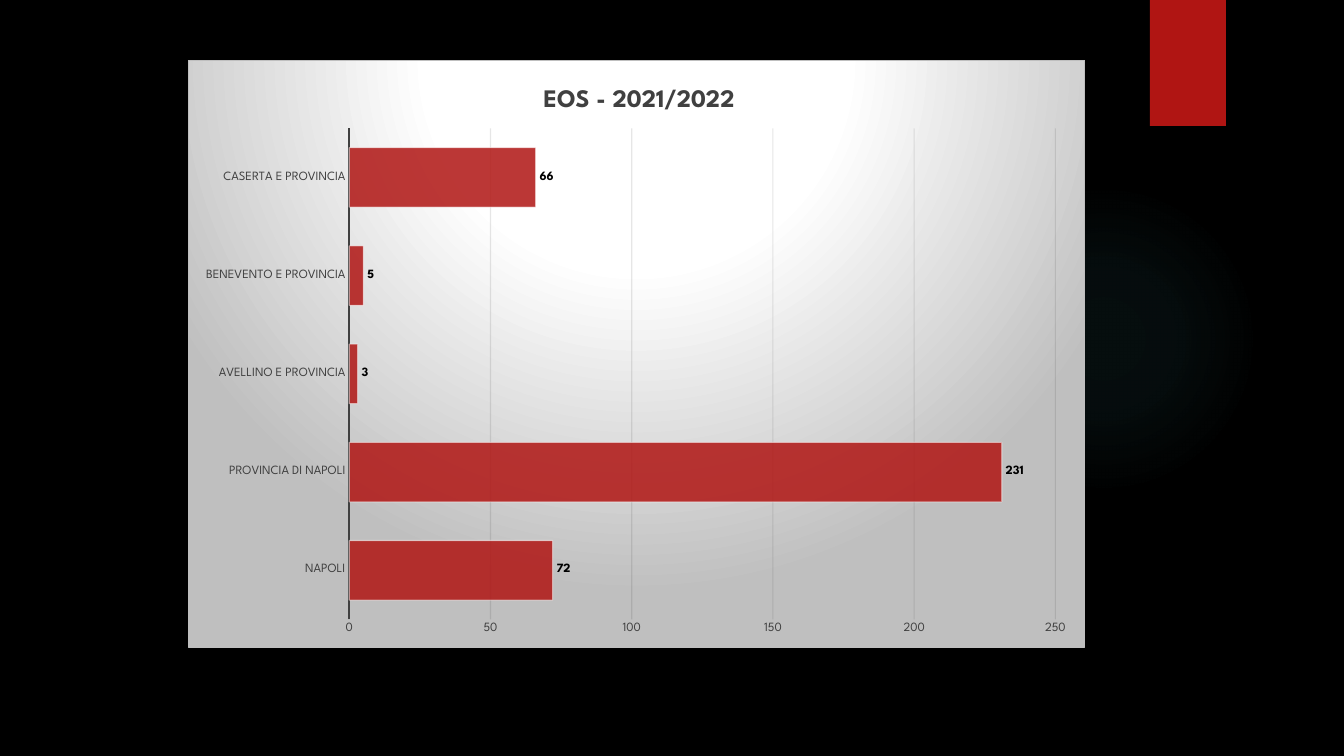
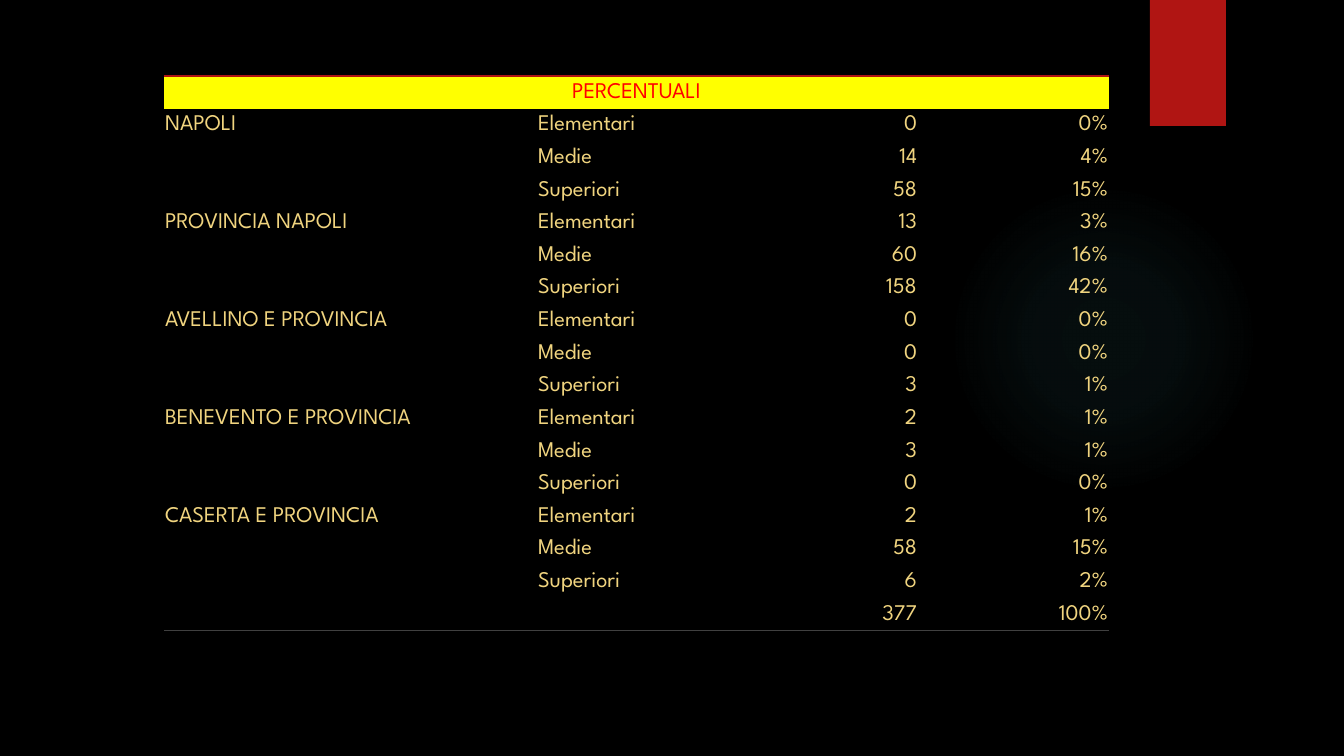
from dataclasses import dataclass
from typing import Optional

from lxml.etree import Element, SubElement
from pptx import Presentation
from pptx.chart.data import CategoryChartData
from pptx.dml.color import RGBColor
from pptx.enum.chart import XL_CHART_TYPE, XL_LABEL_POSITION, XL_TICK_MARK
from pptx.enum.shapes import MSO_SHAPE
from pptx.enum.text import MSO_ANCHOR, PP_ALIGN
from pptx.oxml.ns import qn
from pptx.util import Pt

PX = 914400 / 100.8
FONT = "League Spartan"
NO_TABLE_STYLE = "{2D5ABB26-0587-4C30-8999-92F81FD0307C}"

BLACK = RGBColor(0x00, 0x00, 0x00)
WHITE = RGBColor(0xFF, 0xFF, 0xFF)
RED = RGBColor(0xB0, 0x15, 0x13)
TEAL = RGBColor(0x50, 0xB9, 0xC1)
DARK_GREY = RGBColor(0x40, 0x40, 0x40)
LIGHT_GREY = RGBColor(0xBF, 0xBF, 0xBF)
GRID = RGBColor(0x0D, 0x0D, 0x0D)
SAND = RGBColor(0xF0, 0xD4, 0x7F)
YELLOW = RGBColor(0xFF, 0xFF, 0x00)
TITLE_RED = RGBColor(0xFF, 0x00, 0x00)


def px(n: float) -> int:
    return round(n * PX)


@dataclass(frozen=True)
class Box:
    x: int
    y: int
    w: int
    h: int

    def emu(self) -> tuple[int, int, int, int]:
        return px(self.x), px(self.y), px(self.w), px(self.h)


@dataclass(frozen=True)
class Stop:
    pos: int
    color: RGBColor
    alpha: int = 100


@dataclass(frozen=True)
class Area:
    chart_name: str
    table_name: str
    counts: tuple[int, int, int]


GLOW = Box(949, 184, 310, 310)
RIBBON = Box(1150, 0, 76, 126)
CHART = Box(188, 60, 897, 588)
PLOT = Box(349, 128, 707, 492)
CHART_TITLE = Box(539, 82, 0, 0)
TABLE = Box(164, 76, 945, 555)
COLUMNS = (373, 190, 191, 191)

SCHOOLS = ("Elementari", "Medie", "Superiori")
AREAS = (
    Area("NAPOLI", "NAPOLI", (0, 14, 58)),
    Area("PROVINCIA DI NAPOLI", "PROVINCIA NAPOLI", (13, 60, 158)),
    Area("AVELLINO E PROVINCIA", "AVELLINO E PROVINCIA", (0, 0, 3)),
    Area("BENEVENTO E PROVINCIA", "BENEVENTO E PROVINCIA", (2, 3, 0)),
    Area("CASERTA E PROVINCIA", "CASERTA E PROVINCIA", (2, 58, 6)),
)
TOTAL = sum(sum(a.counts) for a in AREAS)


def set_alpha(fill, percent: int) -> None:
    color = next(fill._xPr.iter(qn("a:srgbClr")))
    SubElement(color, qn("a:alpha"), val=str(percent * 1000))


def circle_gradient(stops: list[Stop], top: int, bottom: int):
    """Radial fill centred across; top and bottom are insets in percent."""
    grad = Element(qn("a:gradFill"), rotWithShape="1")
    stop_list = SubElement(grad, qn("a:gsLst"))
    for stop in stops:
        gs = SubElement(stop_list, qn("a:gs"), pos=str(stop.pos * 1000))
        color = SubElement(gs, qn("a:srgbClr"), val=str(stop.color))
        if stop.alpha < 100:
            SubElement(color, qn("a:alpha"), val=str(stop.alpha * 1000))
    circle = SubElement(grad, qn("a:path"), path="circle")
    SubElement(circle, qn("a:fillToRect"), l="50000", t=str(top * 1000),
               r="50000", b=str(bottom * 1000))
    return grad


def add_plain_shape(s, kind: MSO_SHAPE, box: Box):
    shape = s.shapes.add_shape(kind, *box.emu())
    shape.shadow.inherit = False
    shape.line.fill.background()
    shape.fill.background()
    return shape


def add_base_slide(prs):
    """Blank slide with the glow and the red ribbon."""
    s = prs.slides.add_slide(prs.slide_layouts[6])
    glow = add_plain_shape(s, MSO_SHAPE.OVAL, GLOW)
    spPr = glow._element.spPr
    stops = [Stop(0, TEAL, 7), Stop(36, TEAL, 6), Stop(69, TEAL, 0)]
    spPr.replace(spPr.find(qn("a:noFill")), circle_gradient(stops, 50, 50))
    ribbon = add_plain_shape(s, MSO_SHAPE.RECTANGLE, RIBBON)
    ribbon.fill.solid()
    ribbon.fill.fore_color.rgb = RED
    return s


def style_font(font, size: float, color: RGBColor, bold: bool = False) -> None:
    font.name = FONT
    font.size = Pt(size)
    font.bold = bold
    font.color.rgb = color


def style_line(line, color: RGBColor, width: float, alpha: int = 100) -> None:
    line.color.rgb = color
    line.width = Pt(width)
    if alpha < 100:
        set_alpha(line.fill, alpha)


def place_in_chart(parent, box: Box, inner: bool = False) -> None:
    """Give a chart part a fixed place; a box without width keeps its own size."""
    for old in parent.findall(qn("c:layout")):
        parent.remove(old)
    layout = Element(qn("c:layout"))
    tx = parent.find(qn("c:tx"))
    parent.insert(0 if tx is None else parent.index(tx) + 1, layout)
    manual = SubElement(layout, qn("c:manualLayout"))
    if inner:
        SubElement(manual, qn("c:layoutTarget"), val="inner")
    for mode in ("xMode", "yMode"):
        SubElement(manual, qn(f"c:{mode}"), val="edge")
    values = {"x": (box.x - CHART.x) / CHART.w, "y": (box.y - CHART.y) / CHART.h}
    if box.w:
        values |= {"w": box.w / CHART.w, "h": box.h / CHART.h}
    for key, value in values.items():
        SubElement(manual, qn(f"c:{key}"), val=f"{value:.4f}")


def fill_chart_area(chart) -> None:
    spPr = Element(qn("c:spPr"))
    stops = [Stop(0, WHITE), Stop(39, WHITE), Stop(100, LIGHT_GREY)]
    spPr.append(circle_gradient(stops, -80, 180))
    ln = SubElement(spPr, qn("a:ln"), w=str(Pt(0.75)))
    solid = SubElement(ln, qn("a:solidFill"))
    SubElement(solid, qn("a:srgbClr"), val=str(LIGHT_GREY))
    chart._chartSpace.chart.addnext(spPr)


def add_area_chart(s) -> None:
    data = CategoryChartData()
    data.categories = [a.chart_name for a in AREAS]
    data.add_series("Series 1", [sum(a.counts) for a in AREAS])
    chart = s.shapes.add_chart(
        XL_CHART_TYPE.BAR_CLUSTERED, *CHART.emu(), data).chart
    style_font(chart.font, 10, WHITE)
    chart.has_legend = False
    fill_chart_area(chart)

    title = chart.chart_title
    r = title.text_frame.paragraphs[0].add_run()
    r.text = "EOS - 2021/2022"
    style_font(r.font, 18, DARK_GREY, bold=True)
    place_in_chart(title._element, CHART_TITLE)
    place_in_chart(chart._chartSpace.chart.plotArea, PLOT, inner=True)

    cat_axis, val_axis = chart.category_axis, chart.value_axis
    for axis in (cat_axis, val_axis):
        axis.major_tick_mark = axis.minor_tick_mark = XL_TICK_MARK.NONE
        style_font(axis.tick_labels.font, 9, DARK_GREY)
    style_line(cat_axis.format.line, DARK_GREY, 1.5)
    val_axis.format.line.fill.background()
    val_axis.minimum_scale, val_axis.maximum_scale = 0, 250
    val_axis.major_unit = 50
    style_line(val_axis.major_gridlines.format.line, GRID, 0.75, alpha=10)

    plot = chart.plots[0]
    plot.gap_width = 65
    plot.vary_by_categories = False
    bars = plot.series[0].format
    bars.fill.solid()
    bars.fill.fore_color.rgb = RED
    set_alpha(bars.fill, 85)
    style_line(bars.line, WHITE, 0.75, alpha=50)
    plot.has_data_labels = True
    labels = plot.data_labels
    labels.show_value = True
    labels.position = XL_LABEL_POSITION.OUTSIDE_END
    style_font(labels.font, 9, BLACK, bold=True)


def write_cell(cell, text: str, align: PP_ALIGN, color: RGBColor = SAND,
               fill: Optional[RGBColor] = None) -> None:
    cell.vertical_anchor = MSO_ANCHOR.MIDDLE
    cell.margin_left = cell.margin_right = cell.margin_top = px(1)
    cell.margin_bottom = 0
    if fill is None:
        cell.fill.background()
    else:
        cell.fill.solid()
        cell.fill.fore_color.rgb = fill
    if text:
        p = cell.text_frame.paragraphs[0]
        p.alignment = align
        r = p.add_run()
        r.text = text
        style_font(r.font, 16, color)


def add_border(cell, side: str, color: RGBColor, width: float) -> None:
    ln = Element(qn(f"a:ln{side}"), w=str(Pt(width)))
    solid = SubElement(ln, qn("a:solidFill"))
    SubElement(solid, qn("a:srgbClr"), val=str(color))
    cell._tc.get_or_add_tcPr().insert(0, ln)


def table_rows() -> list[tuple[str, str, str, str]]:
    rows = []
    for area in AREAS:
        for i, (school, count) in enumerate(zip(SCHOOLS, area.counts)):
            name = area.table_name if i == 0 else ""
            rows.append((name, school, str(count), f"{count / TOTAL:.0%}"))
    return rows + [("", "", str(TOTAL), "100%")]


def add_percentage_table(s) -> None:
    rows = table_rows()
    row_count = len(rows) + 1
    table = s.shapes.add_table(row_count, len(COLUMNS), *TABLE.emu()).table
    table.first_row = table.horz_banding = False
    table._tbl.tblPr.find(qn("a:tableStyleId")).text = NO_TABLE_STYLE
    for column, width in zip(table.columns, COLUMNS):
        column.width = px(width)
    for row in table.rows:
        row.height = px(TABLE.h / row_count)

    header = table.cell(0, 0)
    header.merge(table.cell(0, len(COLUMNS) - 1))
    write_cell(header, "PERCENTUALI", PP_ALIGN.CENTER, TITLE_RED, YELLOW)
    aligns = (PP_ALIGN.LEFT, PP_ALIGN.LEFT, PP_ALIGN.RIGHT, PP_ALIGN.RIGHT)
    for i, texts in enumerate(rows, start=1):
        for j, (text, align) in enumerate(zip(texts, aligns)):
            write_cell(table.cell(i, j), text, align)
    for j in range(len(COLUMNS)):
        add_border(table.cell(0, j), "T", RED, 1)
        add_border(table.cell(row_count - 1, j), "B", DARK_GREY, 0.75)


def main() -> None:
    prs = Presentation()
    prs.slide_width, prs.slide_height = px(1344), px(756)
    background = prs.slide_master.background.fill
    background.solid()
    background.fore_color.rgb = BLACK
    add_area_chart(add_base_slide(prs))
    add_percentage_table(add_base_slide(prs))
    prs.save("out.pptx")


if __name__ == "__main__":
    main()
